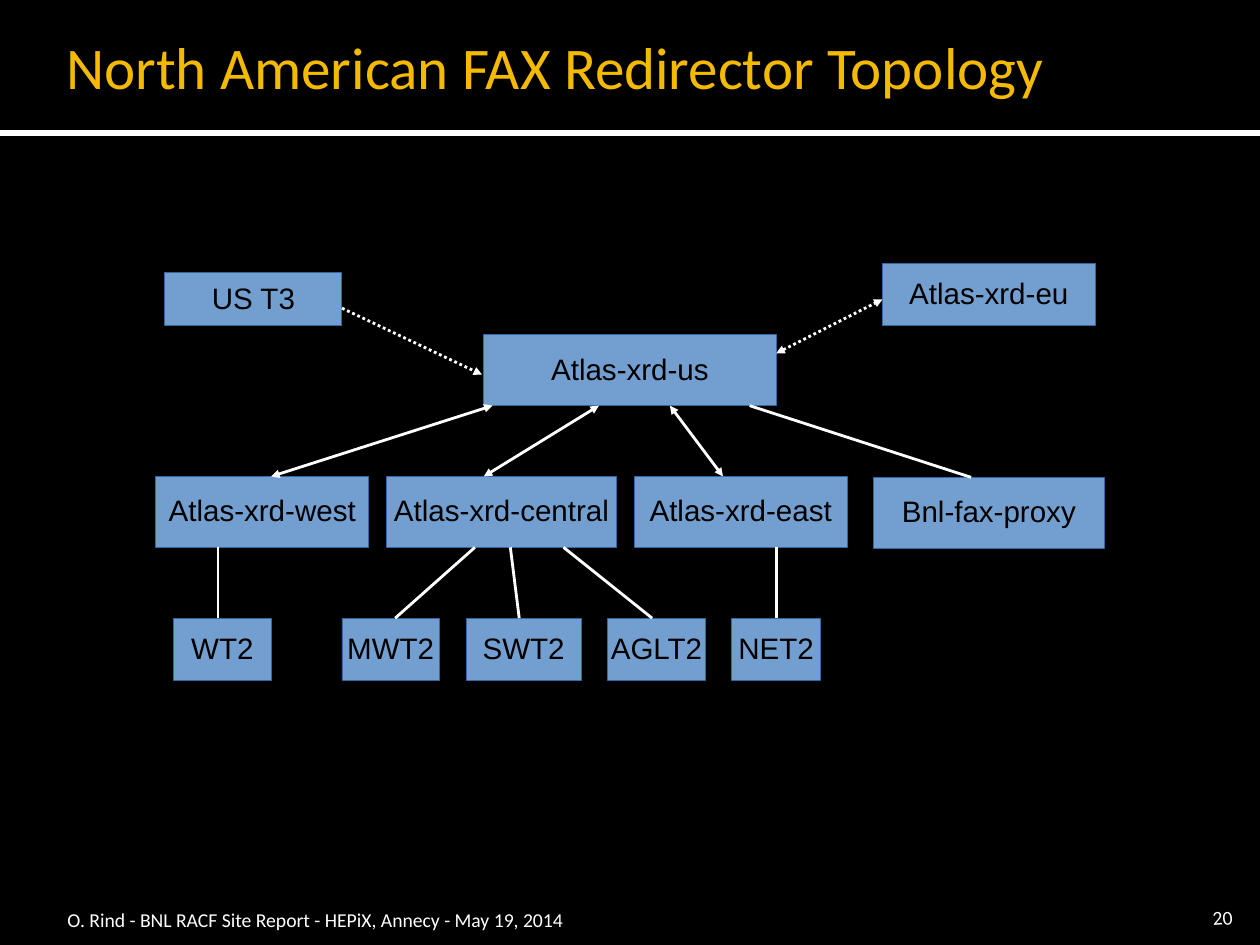
from typing import NamedTuple

from lxml import etree
from pptx import Presentation
from pptx import util as u
from pptx.dml.color import RGBColor
from pptx.enum import dml, shapes, text
from pptx.oxml.ns import qn

COLORS = {
    "background": "000000",
    "title": "F4BA00",
    "light": "FFFFFF",
    "node_fill": "729FCF",
    "node_line": "3465A4",
    "node_text": "000000",
}


class Node(NamedTuple):
    label: str
    left: float
    width: float


class Tier(NamedTuple):
    top: float
    height: float
    nodes: list[Node]


class Link(NamedTuple):
    start: tuple[float, float]
    end: tuple[float, float]
    head: bool = False
    tail: bool = False
    dotted: bool = False


TIERS = [
    Tier(3.08, 0.6, [Node("US T3", 1.86, 2)]),
    Tier(2.98, 0.7, [Node("Atlas-xrd-eu", 9.96, 2.4)]),
    Tier(3.78, 0.8, [Node("Atlas-xrd-us", 5.46, 3.3)]),
    Tier(5.38, 0.8, [
        Node("Atlas-xrd-west", 1.76, 2.4),
        Node("Atlas-xrd-central", 4.36, 2.6),
        Node("Atlas-xrd-east", 7.16, 2.4),
    ]),
    Tier(5.39, 0.8, [Node("Bnl-fax-proxy", 9.86, 2.6)]),
    Tier(6.98, 0.7, [
        Node("WT2", 1.96, 1.1),
        Node("MWT2", 3.86, 1.1),
        Node("SWT2", 5.26, 1.3),
        Node("AGLT2", 6.86, 1.1),
        Node("NET2", 8.26, 1),
    ]),
]

US_BOTTOM, REGION_TOP, REGION_BOTTOM, SITE_TOP = 4.58, 5.38, 6.18, 6.98

# Horizontal ends of the links between neighbouring tiers
REGION_LINKS = [(5.56, 3.06), (6.76, 5.46), (7.56, 8.16)]
SITE_LINKS = [(2.46, 2.46), (5.36, 4.46), (5.76, 5.86), (6.36, 7.36), (8.76, 8.76)]

LINKS = [
    *(Link((x1, US_BOTTOM), (x2, REGION_TOP), head=True, tail=True)
      for x1, x2 in REGION_LINKS),
    Link((8.46, US_BOTTOM), (10.96, 5.39)),
    *(Link((x1, REGION_BOTTOM), (x2, SITE_TOP)) for x1, x2 in SITE_LINKS),
    Link((8.76, 3.99), (9.96, 3.38), head=True, tail=True, dotted=True),
    Link((3.86, 3.48), (5.44, 4.23), tail=True, dotted=True),
]


def color(name: str) -> RGBColor:
    return RGBColor.from_string(COLORS[name])


def place(shape, left: float, top: float, width: float, height: float) -> None:
    shape.left, shape.top = u.Inches(left), u.Inches(top)
    shape.width, shape.height = u.Inches(width), u.Inches(height)


def write(shape, words: str, font: str, size: float, ink: str, align, anchor,
          inset: float, wrap: bool):
    """Fill a shape with one formatted paragraph and return it."""
    frame = shape.text_frame
    frame.text = words
    frame.word_wrap = wrap
    frame.auto_size = text.MSO_AUTO_SIZE.NONE
    frame.vertical_anchor = anchor
    frame.margin_left = frame.margin_right = u.Inches(inset)
    frame.margin_top = frame.margin_bottom = u.Inches(inset)
    paragraph = frame.paragraphs[0]
    paragraph.alignment = align
    paragraph.font.name = font
    paragraph.font.size = u.Pt(size)
    paragraph.font.color.rgb = color(ink)
    return paragraph


def add_node(slide, node: Node, tier: Tier) -> None:
    box = slide.shapes.add_shape(
        shapes.MSO_SHAPE.RECTANGLE, u.Inches(node.left), u.Inches(tier.top),
        u.Inches(node.width), u.Inches(tier.height))
    box.shadow.inherit = False
    box.fill.solid()
    box.fill.fore_color.rgb = color("node_fill")
    box.line.color.rgb = color("node_line")
    box.line.width = u.Pt(0.75)
    label = write(box, node.label, "Arial", 24, "node_text", text.PP_ALIGN.CENTER,
                  text.MSO_ANCHOR.MIDDLE, 0.05, False)
    label.line_spacing = 0.93


def add_link(slide, link: Link, width: float = 2.3) -> None:
    line = slide.shapes.add_connector(
        shapes.MSO_CONNECTOR.STRAIGHT, *(u.Inches(v) for v in link.start + link.end))
    line.line.color.rgb = color("light")
    line.line.width = u.Pt(width)
    if link.dotted:
        line.line.dash_style = dml.MSO_LINE.ROUND_DOT
    properties = line._element.spPr
    outline = properties.find(qn("a:ln"))
    for tag, wanted in (("a:headEnd", link.head), ("a:tailEnd", link.tail)):
        if wanted:
            etree.SubElement(outline, qn(tag), type="triangle")
    etree.SubElement(properties, qn("a:effectLst"))


def add_caption(slide, words: str, box: tuple[float, float, float, float], align,
                anchor, inset: float):
    caption = slide.shapes.add_textbox(*(u.Inches(v) for v in box))
    write(caption, words, "Calibri", 16, "light", align, anchor, inset, False)
    return caption


def main() -> None:
    deck = Presentation()
    deck.slide_width, deck.slide_height = u.Inches(14.22), u.Inches(10.67)
    slide = deck.slides.add_slide(deck.slide_layouts[5])
    slide.background.fill.solid()
    slide.background.fill.fore_color.rgb = color("background")

    # Title and rule
    title = slide.shapes.title
    place(title, 0.71, 0.24, 12.81, 1)
    write(title, "North American FAX Redirector Topology", "Calibri", 48, "title",
          text.PP_ALIGN.LEFT, text.MSO_ANCHOR.MIDDLE, 0.04, True)
    add_link(slide, Link((0, 1.5), (14.22, 1.5)), width=5)

    # Redirector tree
    for tier in TIERS:
        for node in tier.nodes:
            add_node(slide, node, tier)
    for link in LINKS:
        add_link(slide, link)

    # Footer and page number
    add_caption(slide, "O. Rind - BNL RACF Site Report - HEPiX, Annecy - May 19, 2014",
                (0.72, 10.21, 5.94, 0.33), text.PP_ALIGN.LEFT, text.MSO_ANCHOR.TOP, 0.04)
    page = add_caption(slide, "20", (13.67, 10.24, 0.24, 0.25), text.PP_ALIGN.RIGHT,
                       text.MSO_ANCHOR.BOTTOM, 0)
    page.rotation = 355.7

    deck.save("out.pptx")


if __name__ == "__main__":
    main()
